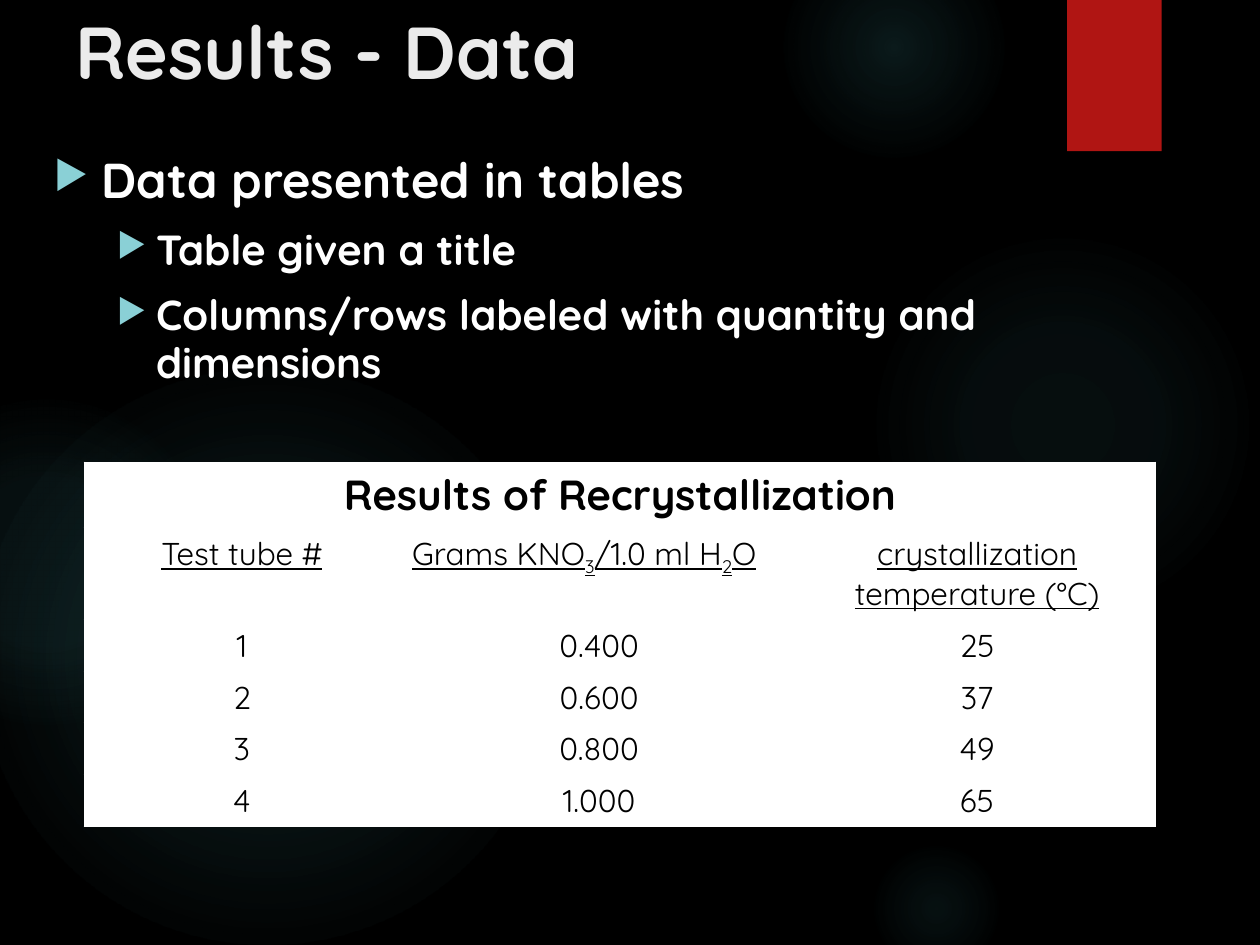
from lxml.etree import SubElement
from pptx import Presentation
from pptx.dml.color import RGBColor
from pptx.enum.shapes import MSO_SHAPE
from pptx.enum.text import MSO_ANCHOR, MSO_AUTO_SIZE, PP_ALIGN
from pptx.oxml import parse_xml
from pptx.oxml.ns import nsdecls, qn
from pptx.util import Inches, Pt

BLACK = RGBColor(0x00, 0x00, 0x00)
WHITE = RGBColor(0xFF, 0xFF, 0xFF)
TITLE_GRAY = RGBColor(0xEB, 0xEB, 0xEB)
RED = RGBColor(0xB0, 0x15, 0x13)
GLOW = RGBColor(0x50, 0xB9, 0xC1)
BULLET = RGBColor(0x8A, 0xD0, 0xD6)

TITLE_FONT = {"size": Pt(42), "bold": True}
BODY_FONTS = [{"size": Pt(28), "bold": True}, {"size": Pt(24), "bold": True}]
CAPTION_FONT = {"size": Pt(24), "bold": True}
HEADER_FONT = {"size": Pt(18), "bold": False, "underline": True}
CELL_FONT = {"size": Pt(18), "bold": False}

GLOWS = [
    (6.89, 1.83, 3.08, [(0, 7), (36, 6), (69, 0)]),
    (6.22, -0.5, 1.75, [(0, 14), (36, 7), (73, 0)]),
    (6.89, 6.67, 1.08, [(0, 9), (36, 5), (66, 0)]),
    (-0.17, 2.92, 4.58, [(0, 11), (36, 10), (75, 0)]),
    (-0.92, 3.17, 2.58, [(0, 8), (36, 8), (72, 0)]),
]
BULLETS = [
    (0, "Data presented in tables"),
    (1, "Table given a title"),
    (1, "Columns/rows labeled with quantity and dimensions"),
]
INDENTS = [(0.38, -0.38), (0.81, -0.31)]
CAPTION = "Results of Recrystallization"
HEADERS = [
    ["Test tube #"],
    ["Grams KNO", "3", "/1.0 ml H", "2", "O"],
    ["crystallization temperature (°C)"],
]
RESULTS = [
    ("1", "0.400", "25"),
    ("2", "0.600", "37"),
    ("3", "0.800", "49"),
    ("4", "1.000", "65"),
]
COL_WIDTHS = [2.5, 3.17, 2.83]
ROW_HEIGHTS = [0.52, 0.73] + [0.41] * len(RESULTS)


def add_run(p, text, color, values):
    r = p.add_run()
    r.text = text
    r.font.name = "Quicksand"
    r.font.color.rgb = color
    for name, value in values.items():
        setattr(r.font, name, value)
    return r


def place(sp, box):
    for name, value in zip(("left", "top", "width", "height"), box):
        setattr(sp, name, Inches(value))


def add_plain_shape(s, kind, box):
    sp = s.shapes.add_shape(kind, *map(Inches, box))
    sp.shadow.inherit = False
    sp.line.fill.background()
    return sp


def add_glow(s, box, stops):
    sp = add_plain_shape(s, MSO_SHAPE.OVAL, box)
    gs = "".join(
        f'<a:gs pos="{pos * 1000}"><a:srgbClr val="{GLOW}">'
        f'<a:alpha val="{alpha * 1000}"/></a:srgbClr></a:gs>'
        for pos, alpha in stops
    )
    grad = parse_xml(
        f'<a:gradFill {nsdecls("a")} rotWithShape="1"><a:gsLst>{gs}</a:gsLst>'
        '<a:path path="circle"><a:fillToRect l="50000" t="50000" r="50000" b="50000"/>'
        "</a:path></a:gradFill>"
    )
    sp.element.spPr.find(qn("a:prstGeom")).addnext(grad)


def add_backdrop(s):
    s.background.fill.solid()
    s.background.fill.fore_color.rgb = BLACK
    for x, y, size, stops in GLOWS:
        add_glow(s, (x, y, size, size), stops)
    tab = add_plain_shape(s, MSO_SHAPE.RECTANGLE, (8.47, 0, 0.75, 1.2))
    tab.fill.solid()
    tab.fill.fore_color.rgb = RED


def fill_title(s, box):
    title = s.shapes.title
    place(title, box)
    tf = title.text_frame
    tf.auto_size = MSO_AUTO_SIZE.NONE
    tf.vertical_anchor = MSO_ANCHOR.TOP
    p = tf.paragraphs[0]
    p.alignment = PP_ALIGN.LEFT
    add_run(p, "Results - Data", TITLE_GRAY, TITLE_FONT)


def set_bullet(p, level):
    p.level = level
    pPr = p._p.get_or_add_pPr()
    for name, value in zip(("marL", "indent"), INDENTS[level]):
        pPr.set(name, str(Inches(value)))
    color = SubElement(pPr, qn("a:buClr"))
    SubElement(color, qn("a:srgbClr"), val=str(BULLET))
    SubElement(pPr, qn("a:buSzPct"), val="80000")
    SubElement(pPr, qn("a:buChar"), char="▶")


def add_bullets(s, box):
    tf = s.shapes.add_textbox(*map(Inches, box)).text_frame
    tf.word_wrap = True
    for i, (level, text) in enumerate(BULLETS):
        p = tf.add_paragraph() if i else tf.paragraphs[0]
        p.space_before = Pt(10)
        p.line_spacing = 0.95
        set_bullet(p, level)
        add_run(p, text, WHITE, BODY_FONTS[level])


def fill_cell(cell, parts, values, align=PP_ALIGN.CENTER):
    p = cell.text_frame.paragraphs[0]
    p.alignment = align
    for i, text in enumerate(parts):
        r = add_run(p, text, BLACK, values)
        if i % 2:
            r.font._element.set("baseline", "-25000")


def style_cell(cell):
    tcPr = cell._tc.get_or_add_tcPr()
    for side in ("lnL", "lnR", "lnT", "lnB"):
        ln = SubElement(tcPr, qn(f"a:{side}"), w=str(Pt(1)))
        SubElement(SubElement(ln, qn("a:solidFill")), qn("a:srgbClr"), val=str(WHITE))
    cell.fill.solid()
    cell.fill.fore_color.rgb = WHITE


def add_results_table(s, box):
    table = s.shapes.add_table(
        len(ROW_HEIGHTS), len(COL_WIDTHS), *map(Inches, box)
    ).table
    for col, width in zip(table.columns, COL_WIDTHS):
        col.width = Inches(width)
    for row, height in zip(table.rows, ROW_HEIGHTS):
        row.height = Inches(height)
    for cell in table.iter_cells():
        style_cell(cell)
    table.cell(0, 0).merge(table.cell(0, len(COL_WIDTHS) - 1))
    fill_cell(table.cell(0, 0), [CAPTION], CAPTION_FONT)
    for c, parts in enumerate(HEADERS):
        align = PP_ALIGN.LEFT if len(parts) > 1 else PP_ALIGN.CENTER
        fill_cell(table.cell(1, c), parts, HEADER_FONT, align)
    for r, values in enumerate(RESULTS, start=2):
        for c, text in enumerate(values):
            fill_cell(table.cell(r, c), [text], CELL_FONT)


def main():
    prs = Presentation()
    prs.slide_width, prs.slide_height = Inches(10), Inches(7.5)
    s = prs.slides.add_slide(prs.slide_layouts[5])
    add_backdrop(s)
    fill_title(s, (0.5, 0, 9, 1.25))
    add_bullets(s, (0.33, 1.17, 9.25, 2.33))
    add_results_table(s, (0.67, 3.67, sum(COL_WIDTHS), sum(ROW_HEIGHTS)))
    prs.save("out.pptx")


if __name__ == "__main__":
    main()
